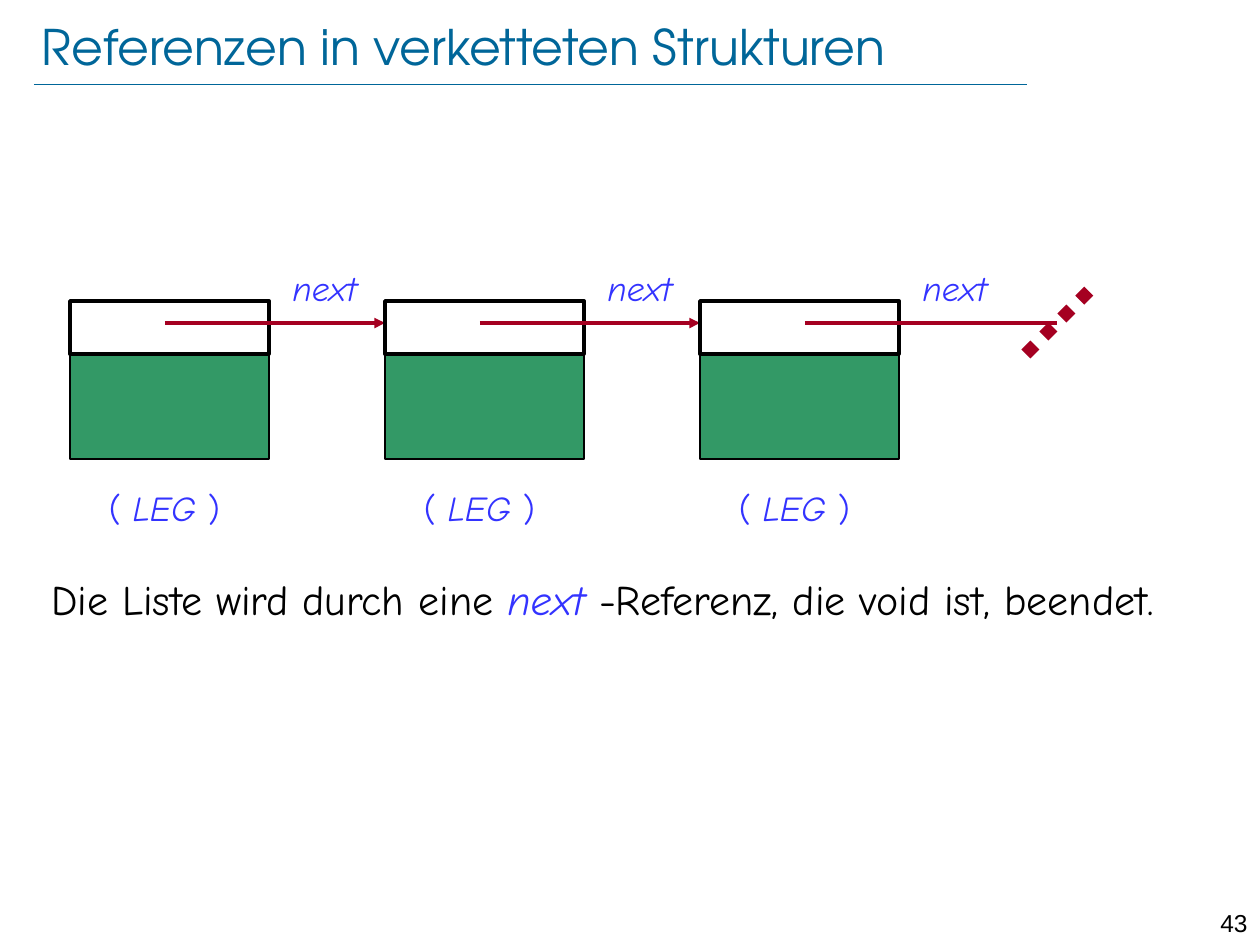
import dataclasses

import lxml.etree
import pptx
import pptx.dml.color
import pptx.enum.shapes
import pptx.enum.text
import pptx.oxml.ns
import pptx.util

PX = 914400 / 126
ALIGN = pptx.enum.text.PP_ALIGN
ANCHOR = pptx.enum.text.MSO_ANCHOR
RECTANGLE = pptx.enum.shapes.MSO_SHAPE.RECTANGLE
STRAIGHT = pptx.enum.shapes.MSO_CONNECTOR.STRAIGHT


@dataclasses.dataclass(frozen=True)
class Theme:
    title: str = "006699"
    ink: str = "000000"
    term: str = "3333FF"
    arrow: str = "A50021"
    data: str = "339966"
    paper: str = "FFFFFF"
    title_font: str = "TeX Gyre Adventor"
    body_font: str = "Comic Neue"
    number_font: str = "Arial"
    title_size: int = 28
    body_size: int = 24
    label_size: int = 20
    number_size: int = 14


THEME = Theme()


def px(length):
    return pptx.util.Emu(round(length * PX))


def rgb(colour):
    return pptx.dml.color.RGBColor.from_string(colour)


def add_text(slide, box, runs, font, size, align=ALIGN.LEFT, inset=None, anchor=ANCHOR.TOP):
    """Place one paragraph; each run is (text, colour, italic)."""
    frame = slide.shapes.add_textbox(*map(px, box)).text_frame
    frame.word_wrap = True
    frame.vertical_anchor = anchor
    if inset is not None:
        frame.margin_left = frame.margin_right = px(inset)
        frame.margin_top = frame.margin_bottom = px(inset)
    paragraph = frame.paragraphs[0]
    paragraph.alignment = align
    for text, colour, italic in runs:
        run = paragraph.add_run()
        run.text = text
        run.font.name = font
        run.font.size = pptx.util.Pt(size)
        run.font.italic = italic
        run.font.color.rgb = rgb(colour)


def add_rectangle(slide, box, fill, line_width):
    rectangle = slide.shapes.add_shape(RECTANGLE, *map(px, box))
    rectangle.shadow.inherit = False
    rectangle.fill.solid()
    rectangle.fill.fore_color.rgb = rgb(fill)
    rectangle.line.color.rgb = rgb(THEME.ink)
    rectangle.line.width = pptx.util.Pt(line_width)


def add_line(slide, start, end, colour, width, dash=None, arrow=False):
    line = slide.shapes.add_connector(STRAIGHT, *map(px, (*start, *end)))
    line.line.color.rgb = rgb(colour)
    line.line.width = pptx.util.Pt(width)
    qn = pptx.oxml.ns.qn
    stroke = line.line._get_or_add_ln()
    if dash:
        lxml.etree.SubElement(stroke, qn("a:prstDash"), val=dash)
    if arrow:
        lxml.etree.SubElement(stroke, qn("a:tailEnd"), type="triangle")
    lxml.etree.SubElement(line._element.spPr, qn("a:effectLst"))


def add_header(slide, box, title):
    left, top, width, height = box
    add_line(slide, (left, top + height), (left + width, top + height), THEME.title, 0.25)
    add_text(slide, (left + 8, top, width + 39, 60), [(title, THEME.title, False)],
             THEME.title_font, THEME.title_size, inset=0, anchor=ANCHOR.MIDDLE)


def add_list_cell(slide, box):
    """Draw a cell with its reference field on top and its labels around it."""
    left, top, width, height = box
    add_rectangle(slide, box, THEME.data, 0.75)
    add_rectangle(slide, (left, top, width, 53), THEME.paper, 2)
    add_text(slide, (left, top + 179, 189, 54),
             [("( ", THEME.term, False), ("LEG ", THEME.term, True), (")", THEME.term, False)],
             THEME.body_font, THEME.label_size, ALIGN.CENTER)
    add_text(slide, (left + width + 11, top - 41, 157, 54), [("next", THEME.term, True)],
             THEME.body_font, THEME.label_size)


def add_linked_list(slide, box, cell_count, pitch):
    left, top, width, height = box
    arrow_y = top + 22
    for index in range(cell_count):
        cell_left = left + index * pitch
        add_list_cell(slide, (cell_left, top, width, height))
        if index < cell_count - 1:
            add_line(slide, (cell_left + 95, arrow_y), (cell_left + pitch, arrow_y),
                     THEME.arrow, 2, arrow=True)
    # The last reference is void: it ends at a dotted diagonal.
    void_x = cell_left + 357
    add_line(slide, (void_x - 252, arrow_y), (void_x, arrow_y), THEME.arrow, 2)
    add_line(slide, (void_x - 31, arrow_y + 31), (void_x + 32, arrow_y - 32),
             THEME.arrow, 7.25, dash="sysDot")


def add_statement(slide, box):
    add_text(slide, box,
             [("Die Liste wird durch eine ", THEME.ink, False), ("next ", THEME.term, True),
              ("-Referenz, die void ist, beendet.", THEME.ink, False)],
             THEME.body_font, THEME.body_size)


def add_page_number(slide, box, number):
    add_text(slide, box, [(number, THEME.ink, False)],
             THEME.number_font, THEME.number_size, ALIGN.RIGHT)


def main():
    presentation = pptx.Presentation()
    presentation.slide_width = px(1260)
    presentation.slide_height = px(945)
    slide = presentation.slides.add_slide(presentation.slide_layouts[6])
    add_header(slide, (34, 16, 993, 68), "Referenzen in verketteten Strukturen")
    add_linked_list(slide, (70, 301, 199, 158), cell_count=3, pitch=315)
    add_statement(slide, (39, 567, 1160, 61))
    add_page_number(slide, (1191, 902, 69, 30), "43")
    presentation.save("out.pptx")


if __name__ == "__main__":
    main()
